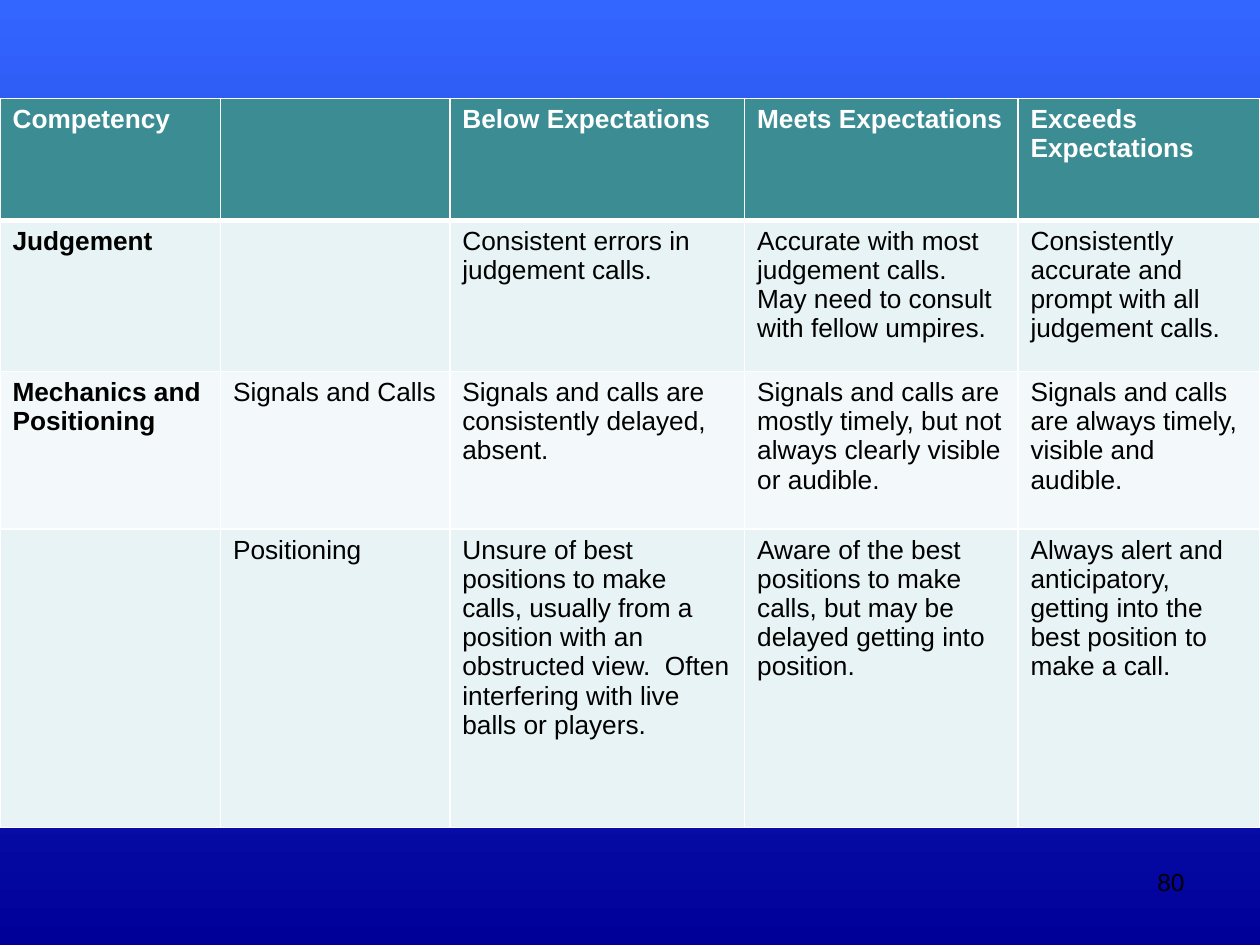
"""Build the umpire competency rubric slide."""
from lxml import etree
from pptx import Presentation
from pptx.dml.color import RGBColor
from pptx.enum import text
from pptx.oxml import ns
from pptx.util import Inches, Pt

THEME = {
    "font": "Arial", "body_size": 15, "number_size": 14,
    "top": "3366FF", "bottom": "000099",
    "header": "3C8C93", "bands": ["F3F9FA", "E7F3F4"],
    "border": "FFFFFF", "light": "FFFFFF", "dark": "000000",
}
COLS = [1.75, 1.82, 2.34, 2.17, 1.92]
ROWS = [0.97, 1.2, 1.25, 2.37]
RUBRIC = [
    ["Competency", "", "Below Expectations", "Meets Expectations",
     "Exceeds Expectations"],
    ["Judgement", "", "Consistent errors in judgement calls.",
     "Accurate with most judgement calls.  May need to consult with fellow umpires.",
     "Consistently accurate and prompt with all judgement calls."],
    ["Mechanics and Positioning", "Signals and Calls",
     "Signals and calls are consistently delayed, absent.",
     "Signals and calls are mostly timely, but not always clearly visible or audible.",
     "Signals and calls are always timely, visible and audible."],
    ["", "Positioning",
     "Unsure of best positions to make calls, usually from a position with an "
     "obstructed view.  Often interfering with live balls or players.",
     "Aware of the best positions to make calls, but may be delayed getting into position.",
     "Always alert and anticipatory, getting into the best position to make a call."],
]


def write(tf, words, size, color, bold=False):
    tf.word_wrap = True
    r = tf.paragraphs[0].add_run()
    r.text = words
    for name, value in {"name": THEME["font"], "size": Pt(size), "bold": bold}.items():
        setattr(r.font, name, value)
    r.font.color.rgb = RGBColor.from_string(color)


def add_borders(cell, widths):
    tc_pr = cell._tc.get_or_add_tcPr()
    for side, width in widths.items():
        ln = etree.SubElement(tc_pr, ns.qn("a:ln" + side), w=str(Pt(width)))
        fill = etree.SubElement(ln, ns.qn("a:solidFill"))
        etree.SubElement(fill, ns.qn("a:srgbClr"), val=THEME["border"])


prs = Presentation()
prs.slide_width, prs.slide_height = Inches(10), Inches(7.5)
s = prs.slides.add_slide(prs.slide_layouts[6])

bg = s.background.fill
bg.gradient()
bg.gradient_angle = 270
for stop, position, key in zip(bg.gradient_stops, (0, 1), ("top", "bottom")):
    stop.position = position
    stop.color.rgb = RGBColor.from_string(THEME[key])

number = s.shapes.add_textbox(Inches(7.17), Inches(6.83), Inches(2.33), Inches(0.52))
write(number.text_frame, "80", THEME["number_size"], THEME["dark"])
number.text_frame.paragraphs[0].alignment = text.PP_ALIGN.RIGHT

table = s.shapes.add_table(len(ROWS), len(COLS), Inches(0), Inches(0.78),
                           Inches(sum(COLS)), Inches(sum(ROWS))).table
table.first_row = table.horz_banding = False
for col, width in zip(table.columns, COLS):
    col.width = Inches(width)
for row, height in zip(table.rows, ROWS):
    row.height = Inches(height)

for i, words in enumerate(RUBRIC):
    header = i == 0
    fill = THEME["header"] if header else THEME["bands"][i % 2]
    color = THEME["light"] if header else THEME["dark"]
    widths = {"L": 1, "R": 1, "T": 3 if i == 1 else 1, "B": 3 if header else 1}
    for j, entry in enumerate(words):
        cell = table.cell(i, j)
        add_borders(cell, widths)
        cell.fill.solid()
        cell.fill.fore_color.rgb = RGBColor.from_string(fill)
        if entry:
            write(cell.text_frame, entry, THEME["body_size"], color, header or j == 0)

prs.save("out.pptx")
